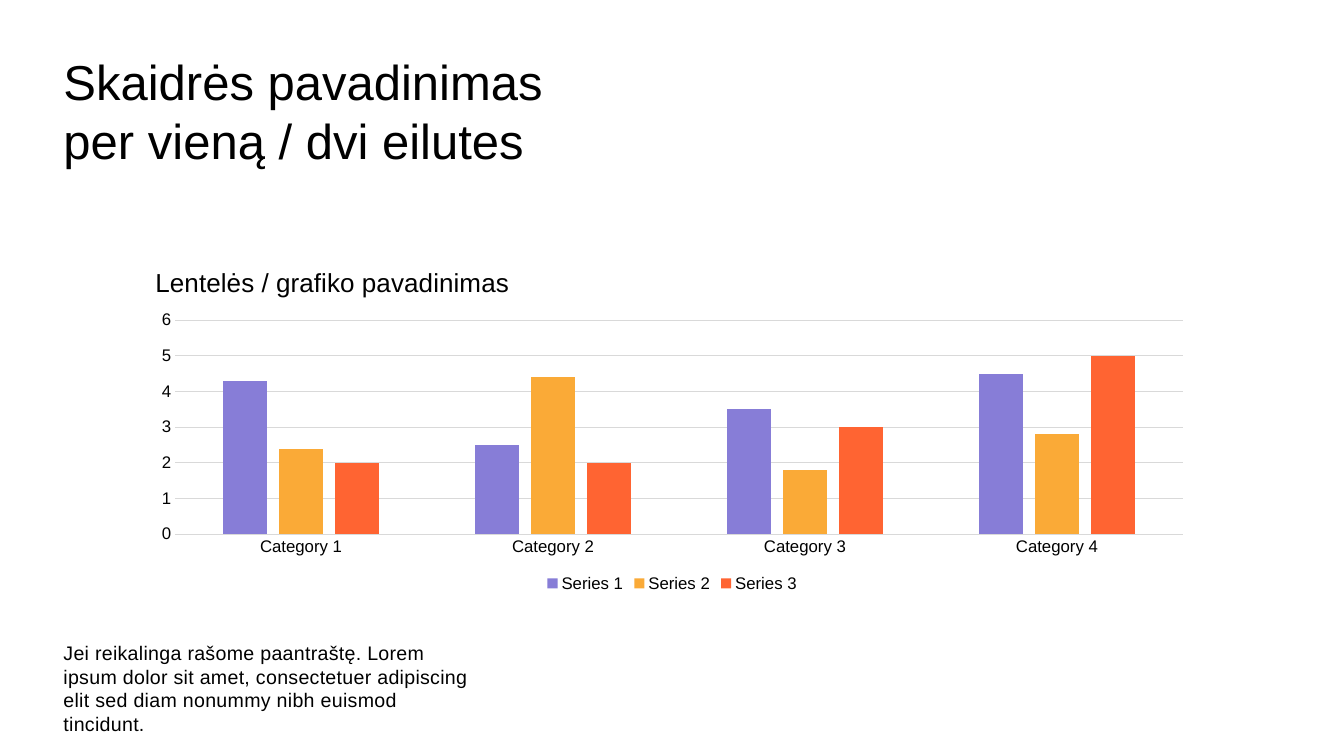
"""Build a slide with a heading, a clustered column chart and a caption."""
import pptx
import pptx.chart.data
import pptx.dml.color
import pptx.enum.chart
import pptx.enum.text
import pptx.oxml
import pptx.util
from pptx.util import Cm, Pt

BLACK = pptx.dml.color.RGBColor(0x00, 0x00, 0x00)
GREY = pptx.dml.color.RGBColor(0xD9, 0xD9, 0xD9)
PURPLE = pptx.dml.color.RGBColor(0x87, 0x7D, 0xD7)
AMBER = pptx.dml.color.RGBColor(0xFA, 0xAA, 0x37)
ORANGE = pptx.dml.color.RGBColor(0xFF, 0x64, 0x32)
CHART_NS = "http://schemas.openxmlformats.org/drawingml/2006/chart"


def style_font(font, size):
    font.name = "Arial"
    font.size = Pt(size)
    font.bold = False
    font.color.rgb = BLACK


def make_layout(target, **fractions):
    parts = [f'<c:{key}Mode val="edge"/>' for key in ("x", "y")]
    parts += [f'<c:{key} val="{value}"/>' for key, value in fractions.items()]
    return pptx.oxml.parse_xml(
        f'<c:layout xmlns:c="{CHART_NS}"><c:manualLayout>{target}'
        f'{"".join(parts)}</c:manualLayout></c:layout>')


deck = pptx.Presentation()
deck.slide_width, deck.slide_height = Cm(33.87), Cm(19.05)
page = deck.slides.add_slide(deck.slide_layouts[6])

texts = [
    ("Skaidrės pavadinimas per vieną / dvi eilutes", 1.17, 13.59, 3.51, 35, 42, 0),
    ("Jei reikalinga rašome paantraštę. Lorem ipsum dolor sit amet, consectetuer "
     "adipiscing elit sed diam nonummy nibh euismod tincidunt.",
     16.03, 11.1, 2.39, 14, 16.8, 20),
]
for text, top, width, height, size, line_height, tracking in texts:
    box = page.shapes.add_textbox(Cm(1.35), Cm(top), Cm(width), Cm(height))
    box.text_frame.word_wrap = True
    box.text_frame.text = text
    para = box.text_frame.paragraphs[0]
    para.line_spacing = Pt(line_height)
    span = para.runs[0]
    style_font(span.font, size)
    if tracking:
        span.font._element.set("spc", str(tracking))

chart_data = pptx.chart.data.CategoryChartData()
chart_data.categories = [f"Category {number}" for number in range(1, 5)]
chart_data.add_series("Series 1", (4.3, 2.5, 3.5, 4.5))
chart_data.add_series("Series 2", (2.4, 4.4, 1.8, 2.8))
chart_data.add_series("Series 3", (2, 2, 3, 5))
chart = page.shapes.add_chart(
    pptx.enum.chart.XL_CHART_TYPE.COLUMN_CLUSTERED,
    Cm(3.53), Cm(6.22), Cm(26.82), Cm(8.81), chart_data).chart
style_font(chart.font, 12)

chart.has_title = True
chart.chart_title.include_in_layout = False
title = chart.chart_title.text_frame
title.text = "Lentelės / grafiko pavadinimas"
style_font(title.paragraphs[0].runs[0].font, 18.6)
title_element = chart.chart_title._element
for old_layout in title_element.findall(f"{{{CHART_NS}}}layout"):
    title_element.remove(old_layout)
title_element.find(f"{{{CHART_NS}}}tx").addnext(make_layout("", x=0.01, y=0.04))

plot = chart.plots[0]
plot.gap_width = 219
plot.overlap = -27
plot.vary_by_categories = False
for series, color in zip(plot.series, (PURPLE, AMBER, ORANGE)):
    series.format.fill.solid()
    series.format.fill.fore_color.rgb = color
    series.invert_if_negative = False

plot_area = chart._chartSpace.chart.plotArea
for old_layout in plot_area.findall(f"{{{CHART_NS}}}layout"):
    plot_area.remove(old_layout)
plot_area.insert(0, make_layout('<c:layoutTarget val="inner"/>',
                                x=0.033, y=0.21, w=0.947, h=0.612))

for axis in (chart.category_axis, chart.value_axis):
    axis.major_tick_mark = pptx.enum.chart.XL_TICK_MARK.NONE
    axis.minor_tick_mark = pptx.enum.chart.XL_TICK_MARK.NONE
    style_font(axis.tick_labels.font, 12)
chart.value_axis.minimum_scale = 0
chart.value_axis.maximum_scale = 6
chart.value_axis.major_unit = 1
chart.value_axis.format.line.fill.background()
for line in (chart.category_axis.format.line,
             chart.value_axis.major_gridlines.format.line):
    line.color.rgb = GREY
    line.width = Pt(0.75)

chart.has_legend = True
chart.legend.position = pptx.enum.chart.XL_LEGEND_POSITION.BOTTOM
chart.legend.include_in_layout = False
style_font(chart.legend.font, 12)

deck.save("out.pptx")
